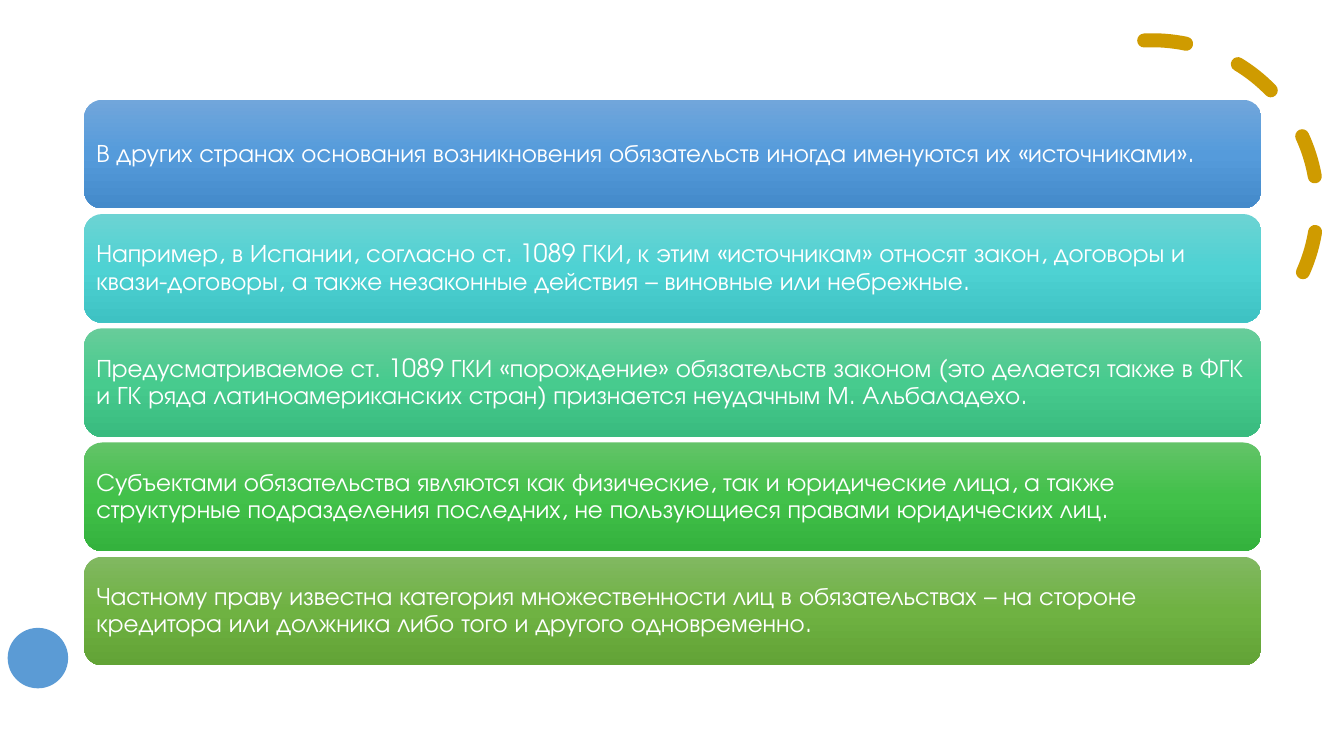
from copy import deepcopy

from pptx import Presentation
from pptx.dml.color import RGBColor
from pptx.enum.dml import MSO_LINE
from pptx.enum.shapes import MSO_SHAPE as SHAPE
from pptx.enum.text import MSO_ANCHOR as ANCHOR, PP_ALIGN as ALIGN
from pptx.oxml.ns import qn
from pptx.util import Pt

CARDS = [
    ("В других странах основания возникновения обязательств иногда именуются "
     "их «источниками».",
     ("71A6DB", "559BDB", "448ACA")),
    ("Например, в Испании, согласно ст. 1089 ГКИ, к этим «источникам» относят "
     "закон, договоры и квази-договоры, а также незаконные действия – виновные "
     "или небрежные.",
     ("6CD3D3", "4ED2D3", "3EC2C3")),
    ("Предусматриваемое ст. 1089 ГКИ «порождение» обязательств законом (это "
     "делается также в ФГК и ГК ряда латиноамериканских стран) признается "
     "неудачным М. Альбаладехо.",
     ("67CC9A", "47CB8E", "39BB7F")),
    ("Субъектами обязательства являются как физические, так и юридические лица, "
     "а также структурные подразделения последних, не пользующиеся правами "
     "юридических лиц.",
     ("63C368", "42C14A", "34B23D")),
    ("Частному праву известна категория множественности лиц в обязательствах – "
     "на стороне кредитора или должника либо того и другого одновременно.",
     ("81B861", "6FB242", "62A336")),
]
CARD_LEFT, CARD_TOP, CARD_WIDTH, CARD_HEIGHT = 60, 71.3, 841, 77.6
CARD_PITCH = 81.6


def rgb(value):
    return RGBColor.from_string(value)


class Deck:
    """Holds the text style and the current slide, and draws its elements."""

    font, size, ink, inset = "TeX Gyre Adventor", 18, "FFFFFF", 5

    def __init__(self, prs):
        self.s = prs.slides.add_slide(prs.slide_layouts[6])
        self.s.background.fill.solid()
        self.s.background.fill.fore_color.rgb = rgb("FFFFFF")

    def shape(self, kind, left, top, width, height):
        sp = self.s.shapes.add_shape(kind, Pt(left), Pt(top), Pt(width), Pt(height))
        sp.shadow.inherit = False
        return sp

    def dashed_arc(self, left, top, size, color, weight):
        sp = self.shape(SHAPE.ARC, left, top, size, size)
        sp.rotation = 357.1
        sp.adjustments[0], sp.adjustments[1] = 162, 22.87
        sp.fill.background()
        sp.line.color.rgb = rgb(color)
        sp.line.width = Pt(weight)
        sp.line.dash_style = MSO_LINE.DASH
        sp.element.spPr.find(qn("a:ln")).set("cap", "rnd")

    def dot(self, left, top, size, color):
        sp = self.shape(SHAPE.OVAL, left, top, size, size)
        sp.fill.solid()
        sp.fill.fore_color.rgb = rgb(color)
        sp.line.fill.background()

    def gradient(self, sp, colors):
        sp.fill.gradient()
        sp.fill.gradient_angle = 270
        stops = sp.element.spPr.find(qn("a:gradFill")).find(qn("a:gsLst"))
        stops.append(deepcopy(stops[-1]))
        for i, (stop, color) in enumerate(zip(sp.fill.gradient_stops, colors)):
            stop.position = i / (len(colors) - 1)
            stop.color.rgb = rgb(color)

    def card(self, top, text, colors):
        sp = self.shape(SHAPE.ROUNDED_RECTANGLE, CARD_LEFT, top, CARD_WIDTH, CARD_HEIGHT)
        self.gradient(sp, colors)
        sp.line.fill.background()
        tf = sp.text_frame
        tf.word_wrap = True
        tf.vertical_anchor = ANCHOR.MIDDLE
        tf.margin_left = tf.margin_right = Pt(self.inset)
        tf.margin_top = tf.margin_bottom = Pt(self.inset)
        p = tf.paragraphs[0]
        p.alignment = ALIGN.LEFT
        p.line_spacing = 0.9
        r = p.add_run()
        r.text = text
        r.font.name = self.font
        r.font.size = Pt(self.size)
        r.font.color.rgb = rgb(self.ink)


def main():
    prs = Presentation()
    prs.slide_width, prs.slide_height = Pt(960), Pt(540)
    deck = Deck(prs)
    deck.dashed_arc(705.6, 28.8, 235.4, "CF9B00", 10)
    deck.dot(5.5, 448.5, 43.2, "5B9BD5")
    for i, (text, colors) in enumerate(CARDS):
        deck.card(CARD_TOP + i * CARD_PITCH, text, colors)
    prs.save("out.pptx")


if __name__ == "__main__":
    main()
